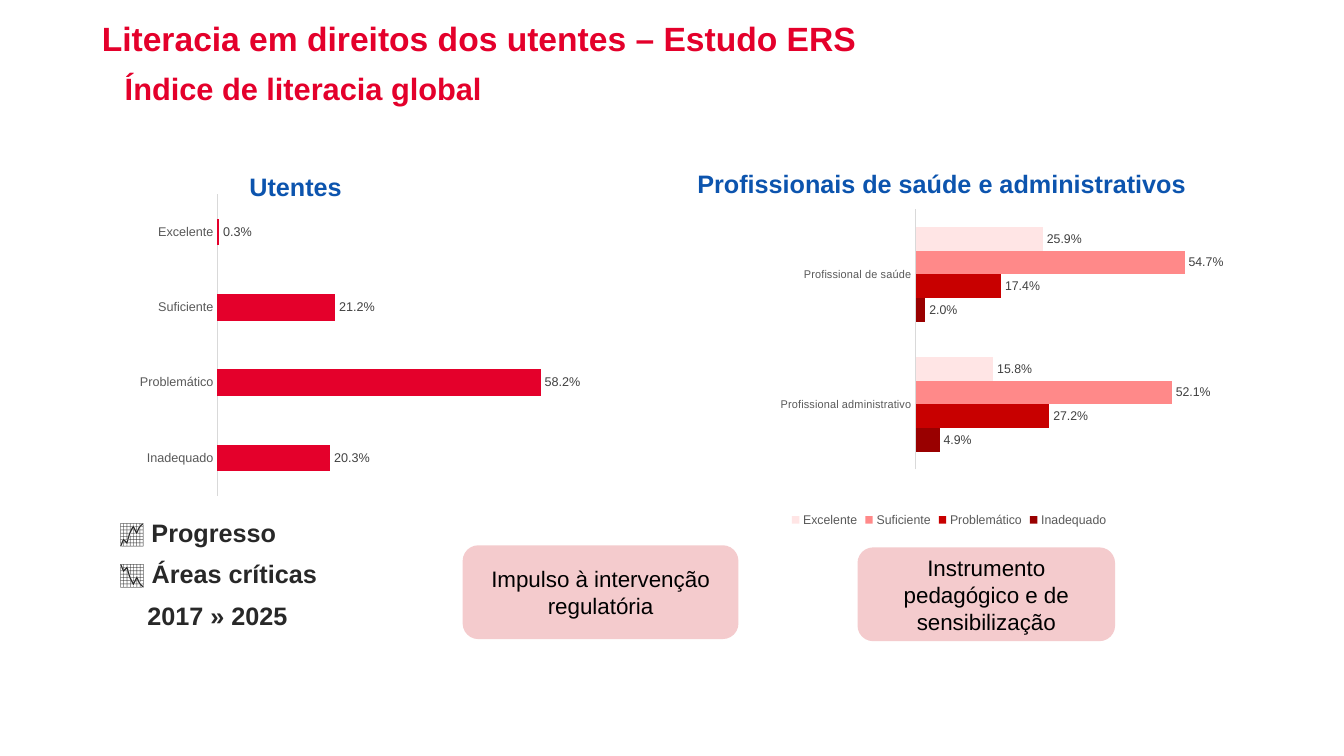
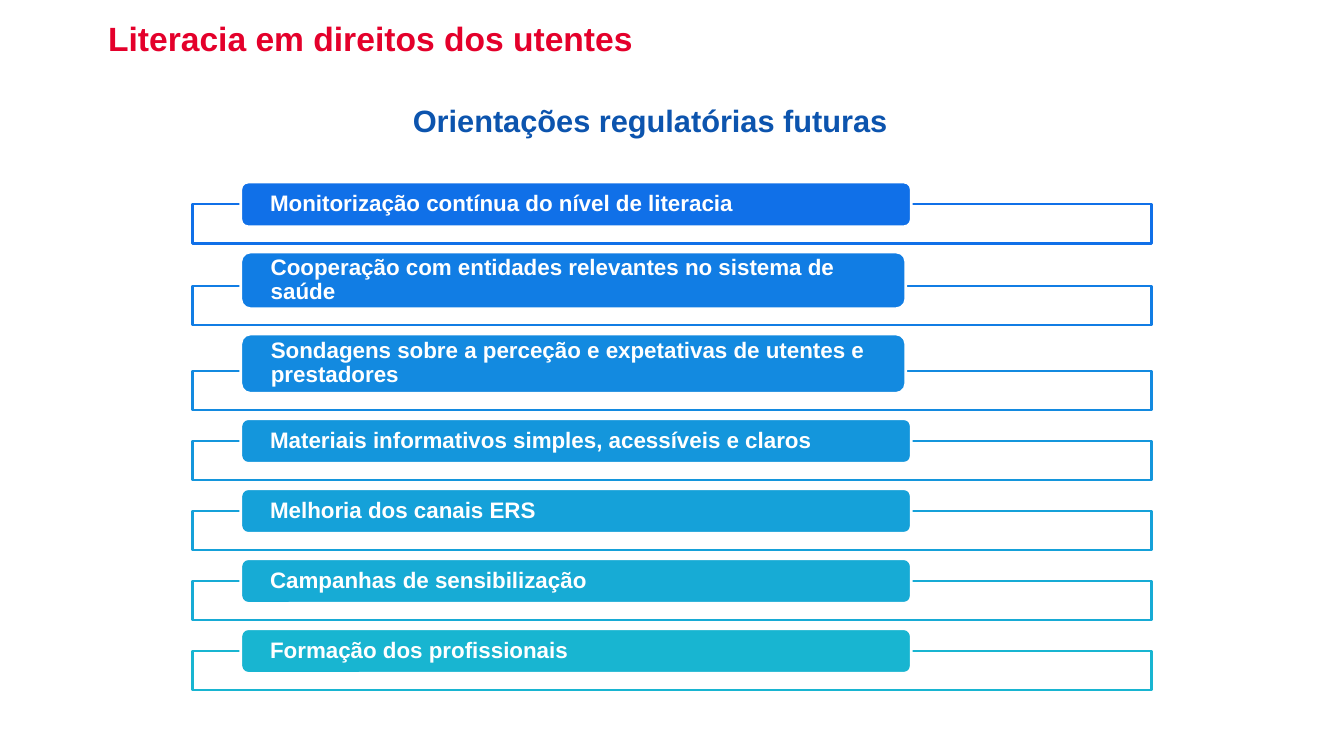
from lxml.etree import SubElement
from pptx import Presentation
from pptx.chart.data import CategoryChartData
from pptx.dml.color import RGBColor
from pptx.enum.chart import XL_CHART_TYPE as ChartType, XL_LABEL_POSITION as LabelPos
from pptx.enum.chart import XL_LEGEND_POSITION as LegendPos, XL_TICK_MARK as Tick
from pptx.enum.shapes import MSO_SHAPE as Shape
from pptx.enum.text import MSO_ANCHOR as Anchor, MSO_AUTO_SIZE as AutoSize, PP_ALIGN as Align
from pptx.oxml import parse_xml
from pptx.oxml.ns import nsdecls, qn
from pptx.util import Pt

FONT = "Arial"
RED, BLUE, DARK, PINK = "E4002B", "0C54AE", "282828", "F4CBCD"
BLACK, WHITE = "000000", "FFFFFF"
AXIS_TEXT, LABEL_TEXT, AXIS_LINE = "595959", "404040", "D9D9D9"

STUDY_TITLE = "Literacia em direitos dos utentes – Estudo ERS"
STUDY_SUBTITLE = "Índice de literacia global"
TRENDS = [("📈 Progresso", 0), ("📉 Áreas críticas", 0), ("2017 » 2025", 20)]  # text, indent
CHART_HEADINGS = [
    ("Utentes", (171, 119, 112, 29)),
    ("Profissionais de saúde e administrativos", (491, 117, 383, 29)),
]
CHARTS = [
    dict(at=(93, 134.5, 347, 224), gap=182, axis_size=9, number_format="0.0%",
         categories=["Inadequado", "Problemático", "Suficiente", "Excelente"],
         series=[("Utentes", (0.203, 0.582, 0.212, 0.003), RED)]),
    dict(at=(491, 127.5, 383, 252), gap=150, axis_size=8, number_format="###0.0%",
         categories=["Profissional administrativo", "Profissional de saúde"],
         series=[("Inadequado", (0.049, 0.02), "990000"),
                 ("Problemático", (0.272, 0.174), "C80000"),
                 ("Suficiente", (0.521, 0.547), "FF8989"),
                 ("Excelente", (0.158, 0.259), "FFE5E5")],
         plot=dict(x=0.436, y=0.088, w=0.564, h=0.737)),
]
PURPOSES = [
    ("Impulso à intervenção regulatória", (330.5, 389.5, 197, 67)),
    ("Instrumento pedagógico e de sensibilização", (612.5, 391, 184, 67)),
]

GUIDE_TITLE = "Literacia em direitos dos utentes"
GUIDE_SUBTITLE = "Orientações regulatórias futuras"
GUIDELINES = [  # text, colour, bar width, bar height
    ("Monitorização contínua do nível de literacia", "1070E8", 479, 32),
    ("Cooperação com entidades relevantes no sistema de saúde", "117DE4", 475, 40.5),
    ("Sondagens sobre a perceção e expetativas de utentes e prestadores", "138AE0", 475, 42.5),
    ("Materiais informativos simples, acessíveis e claros", "1496DC", 479, 32),
    ("Melhoria dos canais ERS", "15A1D9", 479, 32),
    ("Campanhas de sensibilização", "17ABD5", 479, 32),
    ("Formação dos profissionais", "18B5D1", 479, 32),
]
BAR_LEFT, FIRST_BAR_TOP, BAR_INSET = 172, 130, 19.4
FRAME_LEFT, FRAME_WIDTH, FRAME_HEIGHT = 137.5, 685, 28
FRAME_OVERLAP, FRAME_GAP = 16, 6


def rgb(color):
    return RGBColor.from_string(color)


def points(at):
    return [Pt(value) for value in at]


def style_font(font, size, color, bold=False):
    font.name, font.size, font.bold = FONT, Pt(size), bold
    font.color.rgb = rgb(color)


def place(shape, at):
    shape.left, shape.top, shape.width, shape.height = points(at)


def write(shape, text, size, color, bold=True, align=Align.LEFT, anchor=Anchor.TOP):
    frame = shape.text_frame
    frame.word_wrap, frame.auto_size = True, AutoSize.NONE
    frame.vertical_anchor = anchor
    frame.text = text
    for para in frame.paragraphs:
        para.alignment = align
        style_font(para.font, size, color, bold)
    return frame


def add_label(page, text, at, size, color, align=Align.LEFT):
    write(page.shapes.add_textbox(*points(at)), text, size, color, align=align)


def add_panel(page, kind, at, fill, line=None, line_width=0):
    panel = page.shapes.add_shape(kind, *points(at))
    panel.shadow.inherit = False
    panel.fill.solid()
    panel.fill.fore_color.rgb = rgb(fill)
    if line:
        panel.line.color.rgb = rgb(line)
        panel.line.width = Pt(line_width)
    else:
        panel.line.fill.background()
    return panel


def add_page(deck, layout, title, left):
    page = deck.slides.add_slide(deck.slide_layouts[layout])
    place(page.shapes.title, (left, 9.5, 760, 36))
    write(page.shapes.title, title, 24, RED)
    return page


def fix_plot_area(chart, plot):
    """Set the inner plot area as fractions of the chart."""
    area = chart.element.find(".//" + qn("c:plotArea"))
    for old in area.findall(qn("c:layout")):
        area.remove(old)
    settings = dict(layoutTarget="inner", xMode="edge", yMode="edge", **plot)
    parts = "".join(f'<c:{name} val="{value}"/>' for name, value in settings.items())
    area.insert(0, parse_xml(
        f'<c:layout {nsdecls("c")}><c:manualLayout>{parts}</c:manualLayout></c:layout>'))


def add_bar_chart(page, at, gap, axis_size, number_format, categories, series, plot=None):
    data = CategoryChartData(number_format=number_format)
    data.categories = categories
    for name, values, _ in series:
        data.add_series(name, values)
    chart = page.shapes.add_chart(ChartType.BAR_CLUSTERED, *points(at), data).chart
    chart.has_title = False
    style_font(chart.font, 10, BLACK)

    axis = chart.category_axis
    axis.major_tick_mark = axis.minor_tick_mark = Tick.NONE
    axis.format.line.color.rgb = rgb(AXIS_LINE)
    axis.format.line.width = Pt(0.75)
    style_font(axis.tick_labels.font, axis_size, AXIS_TEXT)
    chart.value_axis.visible = False
    chart.value_axis.has_major_gridlines = False

    bars = chart.plots[0]
    bars.gap_width, bars.vary_by_categories = gap, False
    for bar, (_, _, color) in zip(bars.series, series):
        bar.format.fill.solid()
        bar.format.fill.fore_color.rgb = rgb(color)
        labels = bar.data_labels
        labels.show_value, labels.position = True, LabelPos.OUTSIDE_END
        labels.number_format, labels.number_format_is_linked = number_format, False
        style_font(labels.font, 9, LABEL_TEXT)

    chart.has_legend = len(series) > 1
    if chart.has_legend:
        chart.legend.position = LegendPos.BOTTOM
        chart.legend.include_in_layout = False
        style_font(chart.legend.font, 9, AXIS_TEXT)
    if plot:
        fix_plot_area(chart, plot)


def build_study(deck):
    page = add_page(deck, 1, STUDY_TITLE, 65.5)
    add_label(page, STUDY_SUBTITLE, (82, 46, 400, 34), 22, RED)

    body = page.placeholders[1]
    place(body, (78, 368.5, 230, 96))
    frame = body.text_frame
    frame.text = "\n".join(text for text, _ in TRENDS)
    for number, (para, (_, indent)) in enumerate(zip(frame.paragraphs, TRENDS)):
        props = para._p.get_or_add_pPr()
        props.set("marL", str(Pt(indent)))
        props.set("indent", "0")
        SubElement(props, qn("a:buNone"))
        para.line_spacing = 0.9
        para.space_before = Pt(10 if number else 0)
        style_font(para.font, 18, DARK, True)
    frame.word_wrap, frame.auto_size = True, AutoSize.NONE

    for chart in CHARTS:
        add_bar_chart(page, **chart)
    for text, at in CHART_HEADINGS:
        add_label(page, text, at, 18, BLUE)
    for text, at in PURPOSES:
        panel = add_panel(page, Shape.ROUNDED_RECTANGLE, at, PINK)
        write(panel, text, 16, BLACK, False, Align.CENTER, Anchor.MIDDLE)


def build_guidelines(deck):
    page = add_page(deck, 5, GUIDE_TITLE, 70)
    add_label(page, GUIDE_SUBTITLE, (70, 69, 789, 34), 22, BLUE, Align.CENTER)
    top = FIRST_BAR_TOP
    for text, color, width, height in GUIDELINES:
        frame_top = top + height - FRAME_OVERLAP
        add_panel(page, Shape.RECTANGLE, (FRAME_LEFT, frame_top, FRAME_WIDTH, FRAME_HEIGHT),
                  WHITE, color, 1.5)
        bar = add_panel(page, Shape.ROUNDED_RECTANGLE, (BAR_LEFT, top, width, height),
                        color, WHITE, 2)
        frame = write(bar, text, 16, WHITE, anchor=Anchor.MIDDLE)
        frame.margin_left = frame.margin_right = Pt(BAR_INSET)
        frame.margin_top = frame.margin_bottom = 0
        frame.paragraphs[0].line_spacing = 0.9
        top = frame_top + FRAME_HEIGHT + FRAME_GAP


def main():
    deck = Presentation()
    deck.slide_width, deck.slide_height = Pt(960), Pt(540)
    build_study(deck)
    build_guidelines(deck)
    deck.save("out.pptx")


if __name__ == "__main__":
    main()
